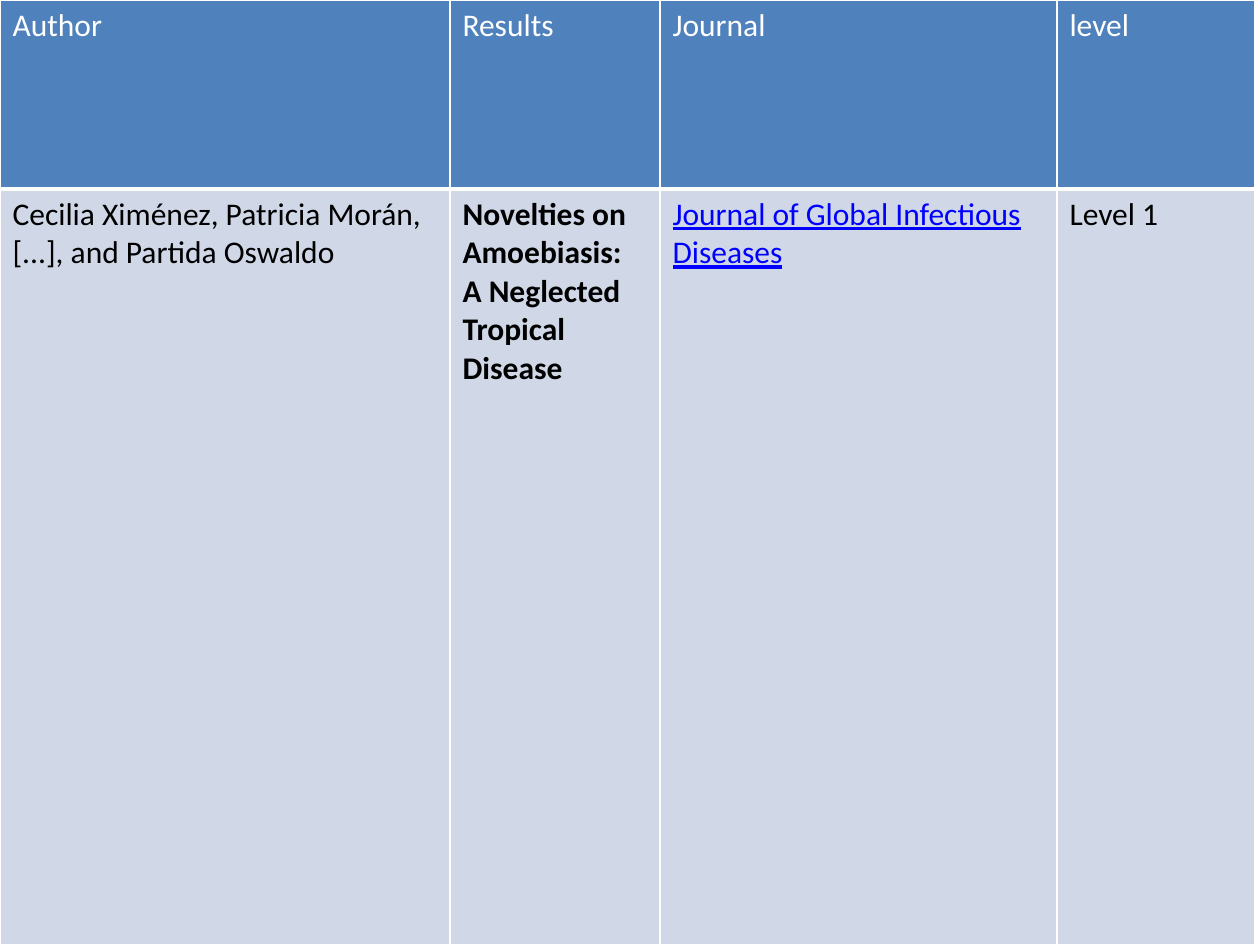
"""Build a literature table slide that lists one amoebiasis review."""
from dataclasses import dataclass

from lxml.etree import SubElement
from pptx import Presentation
from pptx.dml.color import RGBColor as Color
from pptx.oxml.ns import qn
from pptx.table import _Cell as Cell
from pptx.util import Emu, Pt

PX_PER_INCH = 126
SLIDE_SIZE = (1260, 945)
COLUMN_WIDTHS = (450, 210, 397, 198)
ROW_HEIGHTS = (189, 756)


@dataclass(frozen=True)
class Theme:
    font: str = "Calibri"
    text_size: int = 18
    header_fill: str = "4F81BD"
    body_fill: str = "D0D8E8"
    header_text: str = "FFFFFF"
    body_text: str = "000000"
    link_text: str = "0000FF"
    border: str = "FFFFFF"
    thin_border: int = 1
    thick_border: int = 3


THEME = Theme()


@dataclass(frozen=True)
class Entry:
    text: str
    color: str = THEME.body_text
    bold: bool = False
    underline: bool = False


@dataclass(frozen=True)
class Row:
    entries: tuple[Entry, ...]
    fill: str
    top_border: int = THEME.thin_border
    bottom_border: int = THEME.thin_border


ROWS = (
    Row(
        tuple(Entry(title, THEME.header_text) for title in ("Author", "Results", "Journal", "level")),
        THEME.header_fill,
        bottom_border=THEME.thick_border,
    ),
    Row(
        (
            Entry("Cecilia Ximénez, Patricia Morán, [...], and Partida Oswaldo"),
            Entry("Novelties on Amoebiasis: A Neglected Tropical Disease", bold=True),
            Entry("Journal of Global Infectious Diseases", THEME.link_text, underline=True),
            Entry("Level 1"),
        ),
        THEME.body_fill,
        top_border=THEME.thick_border,
    ),
)


def px(length: int) -> Emu:
    """Convert pixels to EMU."""
    return Emu(round(length * 914400 / PX_PER_INCH))


def apply_format(target: object, values: dict[str, object]) -> None:
    """Set each named attribute on the target."""
    for name, value in values.items():
        setattr(target, name, value)


def draw_borders(cell: Cell, row: Row) -> None:
    """Draw the four solid borders of a cell."""
    properties = cell._tc.get_or_add_tcPr()
    widths = {
        "a:lnL": THEME.thin_border,
        "a:lnR": THEME.thin_border,
        "a:lnT": row.top_border,
        "a:lnB": row.bottom_border,
    }
    for tag, width in widths.items():
        line = SubElement(properties, qn(tag), w=str(Pt(width)))
        fill = SubElement(line, qn("a:solidFill"))
        SubElement(fill, qn("a:srgbClr"), val=THEME.border)


def draw_cell(cell: Cell, entry: Entry, row: Row) -> None:
    """Draw one cell with its borders, fill and text."""
    draw_borders(cell, row)
    cell.fill.solid()
    cell.fill.fore_color.rgb = Color.from_string(row.fill)
    run = cell.text_frame.paragraphs[0].add_run()
    run.text = entry.text
    apply_format(run.font, {
        "name": THEME.font,
        "size": Pt(THEME.text_size),
        "bold": entry.bold,
        "underline": entry.underline,
    })
    run.font.color.rgb = Color.from_string(entry.color)


def main() -> None:
    """Build and save the presentation."""
    presentation = Presentation()
    width, height = map(px, SLIDE_SIZE)
    apply_format(presentation, {"slide_width": width, "slide_height": height})
    slide = presentation.slides.add_slide(presentation.slide_layouts[6])
    table = slide.shapes.add_table(
        len(ROWS), len(COLUMN_WIDTHS), 0, 0, px(sum(COLUMN_WIDTHS)), px(sum(ROW_HEIGHTS))
    ).table
    apply_format(table, {"first_row": False, "horz_banding": False})
    for column, column_width in zip(table.columns, COLUMN_WIDTHS):
        column.width = px(column_width)
    for table_row, row_height, row in zip(table.rows, ROW_HEIGHTS, ROWS):
        table_row.height = px(row_height)
        for cell, entry in zip(table_row.cells, row.entries):
            draw_cell(cell, entry, row)
    presentation.save("out.pptx")


if __name__ == "__main__":
    main()
